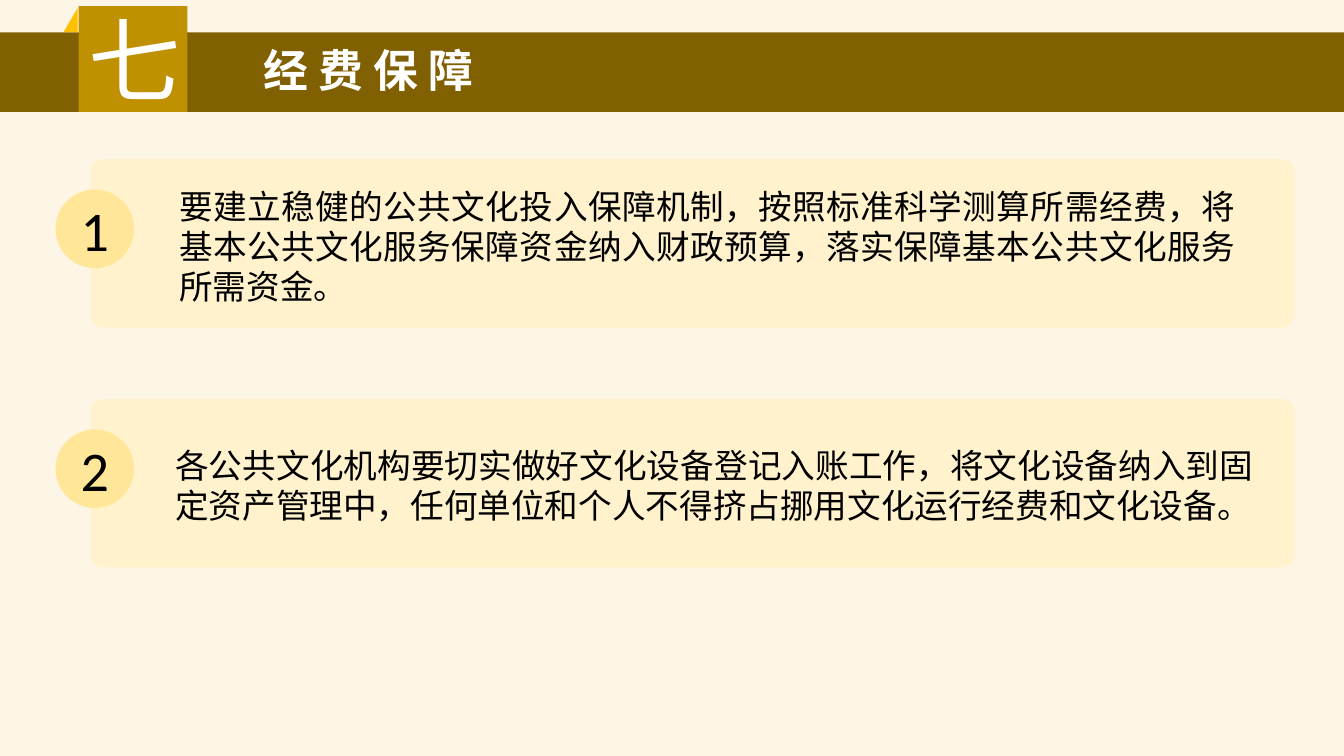
from pptx import Presentation
from pptx.dml.color import RGBColor as RGB
from pptx.enum.shapes import MSO_SHAPE as Shape
from pptx.enum.text import MSO_ANCHOR as Anchor, MSO_AUTO_SIZE as Auto, PP_ALIGN as Align
from pptx.oxml.ns import qn
from pptx.util import Inches, Pt
from lxml.etree import SubElement

SANS = "Noto Sans CJK SC"
POINTS = [
    ("要建立稳健的公共文化投入保障机制，按照标准科学测算所需经费，将基本公共文化服务保障资金纳入财政预算，落实保障基本公共文化服务所需资金。",
     (1.68, 1.79, 10.67, 1.31)),
    ("各公共文化机构要切实做好文化设备登记入账工作，将文化设备纳入到固定资产管理中，任何单位和个人不得挤占挪用文化运行经费和文化设备。",
     (1.64, 4.36, 10.89, 0.91)),
]
TOP, STEP = 1.58, 2.38


def paint(fill, color):
    fill.solid()
    fill.fore_color.rgb = RGB.from_string(color)


def write(frame, text, size, face, color, align=Align.LEFT, anchor=Anchor.TOP, bold=False, wrap=True):
    frame.auto_size = Auto.NONE
    frame.word_wrap = wrap
    frame.vertical_anchor = anchor
    par = frame.paragraphs[0]
    par.text = text
    par.alignment = align
    font = par.font
    font.size = Pt(size)
    font.bold = bold
    paint(font.fill, color)
    font.name = face
    # Chinese glyphs take the East Asian face
    SubElement(font._element, qn("a:ea"), typeface=face)


def add_form(slide, kind, box, color):
    form = slide.shapes.add_shape(kind, *map(Inches, box))
    form.shadow.inherit = False
    paint(form.fill, color)
    form.line.fill.background()
    return form


def add_text(slide, box, *args, **opts):
    area = slide.shapes.add_textbox(*map(Inches, box))
    write(area.text_frame, *args, **opts)


def add_head(slide):
    # Band, number tile and folded corner
    add_form(slide, Shape.RECTANGLE, (0, 0.32, 13.33, 0.79), "806000")
    add_form(slide, Shape.RECTANGLE, (0.78, 0.06, 1.08, 1.05), "BF9000")
    fold = add_form(slide, Shape.RIGHT_TRIANGLE, (0.63, 0.08, 0.14, 0.24), "FFC000")
    fold._element.spPr.xfrm.set("flipH", "1")
    add_text(slide, (0.78, -0.02, 0.97, 1.21), "七", 66, "Roboto", "FFFFFF")

    # Title, lifted above the band
    title = slide.shapes.title
    title.left, title.top, title.width, title.height = map(Inches, (2.51, 0.37, 2.4, 0.64))
    write(title.text_frame, "经 费 保 障", 32, SANS, "FFFFFF", bold=True, wrap=False)
    slide.shapes._spTree.append(title._element)


def add_point(slide, num, top, text, box):
    card = add_form(slide, Shape.ROUNDED_RECTANGLE, (0.9, top, 11.94, 1.67), "FFF2CC")
    card.adjustments[0] = 0.07
    add_text(slide, box, text, 24, SANS, "000000", align=Align.JUSTIFY)
    disc = add_form(slide, Shape.OVAL, (0.55, top + 0.3, 0.78, 0.78), "FFE699")
    write(disc.text_frame, str(num), 40, "Calibri", "000000", Align.CENTER, Anchor.MIDDLE)


def main():
    deck = Presentation()
    deck.slide_width, deck.slide_height = Inches(13.33), Inches(7.5)
    slide = deck.slides.add_slide(deck.slide_layouts[5])
    paint(slide.background.fill, "FDF6E6")
    add_head(slide)
    # Numbered cards
    for i, (text, box) in enumerate(POINTS):
        add_point(slide, i + 1, TOP + i * STEP, text, box)
    deck.save("out.pptx")


if __name__ == "__main__":
    main()
